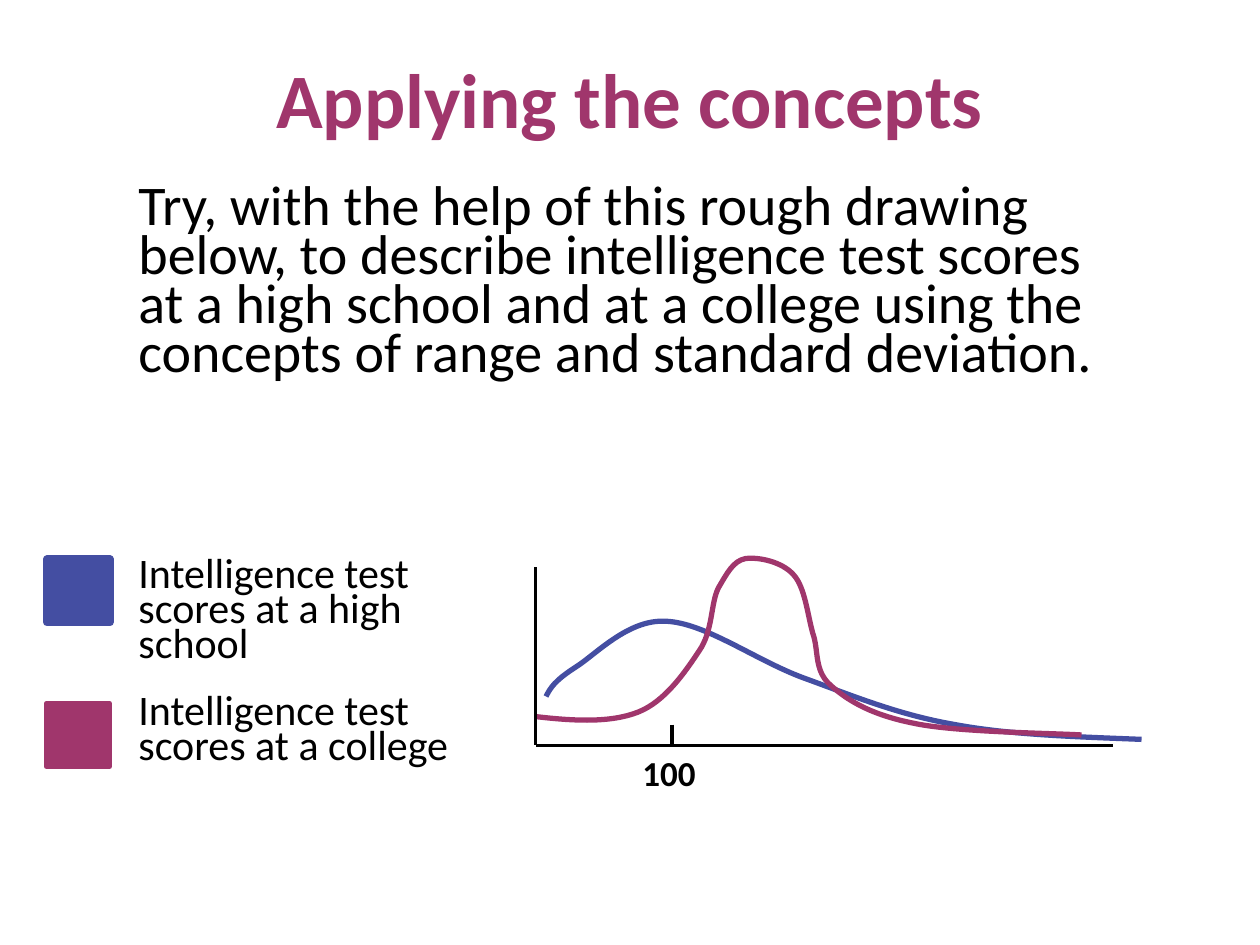
from pptx import Presentation
from pptx.util import Pt
from pptx.dml.color import RGBColor as Rgb
from pptx.enum.shapes import MSO_SHAPE as Shape, MSO_CONNECTOR as Conn
from pptx.enum.text import PP_ALIGN as Align, MSO_ANCHOR as Anchor
from pptx.oxml.ns import qn
from lxml import etree

COLORS = {"school": "444EA2", "college": "A0366C", "ink": "000000"}

# Bezier curves in points: a start, then two controls and an end per segment
SCHOOL = [
    (312, 398),
    (314.5, 393), (317, 389), (328.5, 381.5),
    (340, 374.5), (358.5, 354), (380, 355),
    (402.5, 355.5), (432, 377.5), (459.5, 387.5),
    (487, 397.5), (513.5, 408.5), (545.5, 414),
    (577.5, 420), (615, 421), (652.3, 422.5),
]
COLLEGE = [
    (306, 409.5),
    (327.5, 412), (348.5, 413.2), (364.5, 407),
    (380, 401), (391.5, 384), (399.5, 372),
    (407.5, 360.5), (406, 345), (410.5, 336),
    (415.5, 327.5), (419, 320.5), (426, 319.2),
    (433.5, 318.2), (447, 321), (453.5, 328.5),
    (460, 335.5), (461.5, 351.5), (464.5, 362),
    (468, 372), (465, 383), (474.5, 391.5),
    (484.5, 400.5), (498, 408.5), (522, 413.3),
    (546, 418.5), (602.5, 419), (618, 420),
]


def write(frame, text, size=24, color="ink", bold=False, align=Align.LEFT,
          anchor=Anchor.TOP, lead=None, before=0):
    frame.word_wrap = True
    frame.vertical_anchor = anchor
    para = frame.paragraphs[0]
    para.alignment = align
    para.space_before = Pt(before)
    if lead:
        para.line_spacing = Pt(lead)
    run = para.add_run()
    run.text = text
    font = run.font
    font.name, font.size, font.bold = "Calibri", Pt(size), bold
    font.color.rgb = Rgb.from_string(COLORS[color])


class Deck:
    def __init__(self):
        self.prs = Presentation()
        self.prs.slide_width, self.prs.slide_height = Pt(720), Pt(540)
        self.slide = self.prs.slides.add_slide(self.prs.slide_layouts[5])
        self.shapes = self.slide.shapes

    def stroke(self, line, color, width):
        line.color.rgb = Rgb.from_string(COLORS[color])
        line.width = Pt(width)

    def title(self, text, x, y, w, h, **style):
        box = self.shapes.title
        box.left, box.top, box.width, box.height = map(Pt, (x, y, w, h))
        write(box.text_frame, text, **style)

    def text(self, text, x, y, w, h, **style):
        box = self.shapes.add_textbox(*map(Pt, (x, y, w, h)))
        write(box.text_frame, text, **style)

    def square(self, x, y, side, color, width):
        box = self.shapes.add_shape(Shape.RECTANGLE, *map(Pt, (x, y, side, side)))
        box.shadow.inherit = False
        box.fill.solid()
        box.fill.fore_color.rgb = Rgb.from_string(COLORS[color])
        self.stroke(box.line, color, width)

    def line(self, x1, y1, x2, y2):
        rule = self.shapes.add_connector(Conn.STRAIGHT, *map(Pt, (x1, y1, x2, y2)))
        etree.SubElement(rule._element.spPr, qn("a:effectLst"))
        self.stroke(rule.line, "ink", 2.25)

    def curve(self, knots, color):
        form = self.shapes.build_freeform(*map(Pt, knots[0]))
        form.add_line_segments([tuple(map(Pt, k)) for k in knots[1:]], close=False)
        curve = form.convert_to_shape()
        # Join each three straight steps into one Bezier segment
        steps = list(curve._element.iter(qn("a:lnTo")))
        for i in range(0, len(steps), 3):
            first, *rest = steps[i:i + 3]
            bend = etree.Element(qn("a:cubicBezTo"))
            first.addprevious(bend)
            for step in (first, *rest):
                bend.append(step[0])
                step.getparent().remove(step)
        curve.shadow.inherit = False
        curve.fill.background()
        self.stroke(curve.line, color, 3)


def main():
    deck = Deck()

    # Heading and task
    deck.title("Applying the concepts", 36, 21.6, 648, 68.4, size=44,
               color="college", bold=True, align=Align.CENTER, anchor=Anchor.MIDDLE)
    deck.text("Try, with the help of this rough drawing below, to describe "
              "intelligence test scores at a high school and at a college using "
              "the concepts of range and standard deviation.",
              72, 103.7, 573.8, 107.3, size=32, lead=28, before=6.4)

    # Score curves
    deck.curve(SCHOOL, "school")
    deck.curve(COLLEGE, "college")

    # Legend
    deck.square(26.6, 402, 36, "college", 3)
    deck.square(26.8, 319.7, 36, "school", 4.5)
    deck.text("Intelligence test scores at a high school", 72, 317.5, 228, 69, lead=20)
    deck.text("Intelligence test scores at a college", 72, 396, 216, 49, lead=20)

    # Axes, tick and its label
    deck.line(306, 324, 306, 426)
    deck.line(306, 426, 636, 426)
    deck.line(384, 414, 384, 426)
    deck.text("100", 360, 426, 48, 31.5, size=20, bold=True)

    deck.prs.save("out.pptx")


if __name__ == "__main__":
    main()
